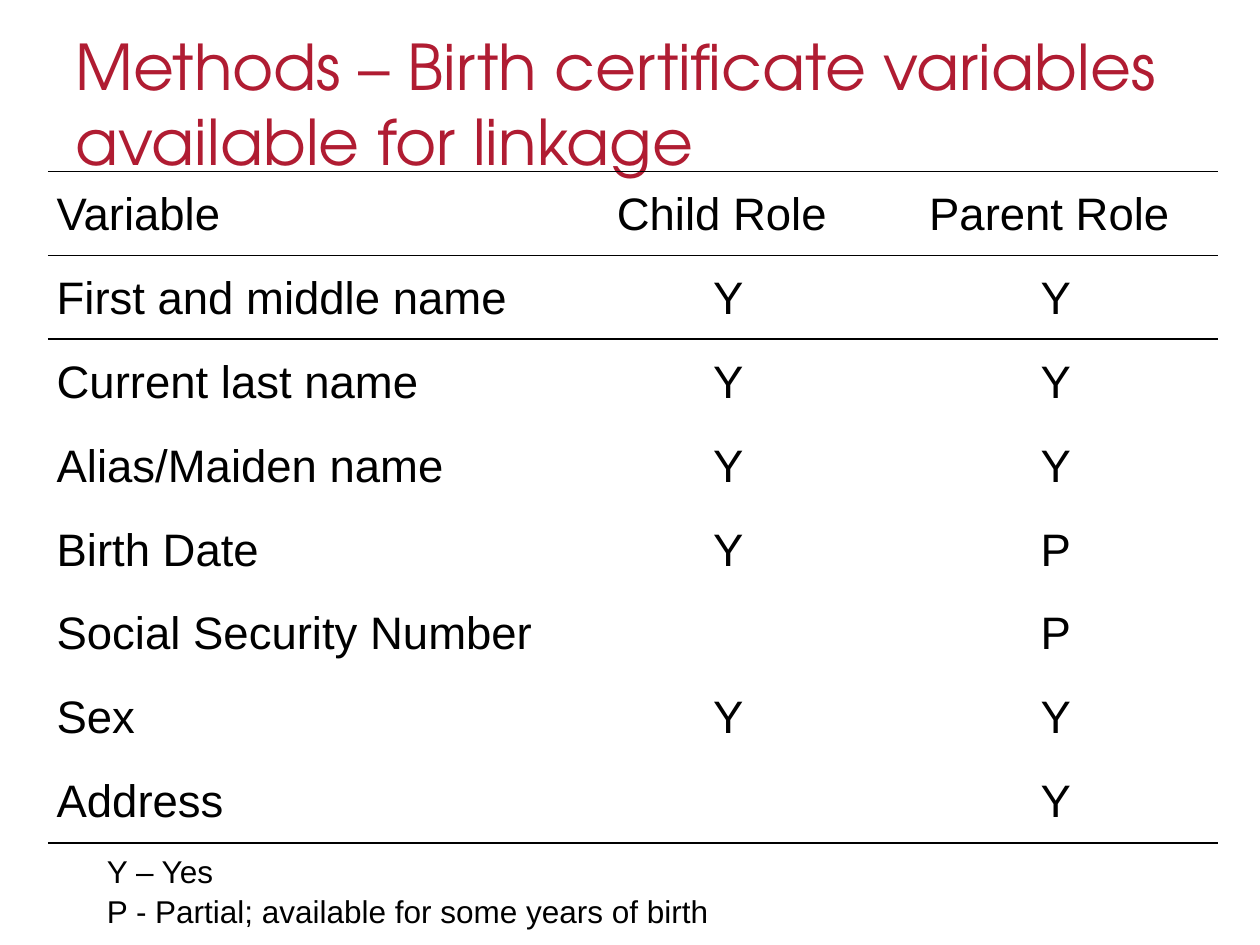
from lxml import etree
from pptx import Presentation
from pptx.dml.color import RGBColor
from pptx.enum.text import MSO_ANCHOR, PP_ALIGN
from pptx.oxml import parse_xml
from pptx.util import Inches, Pt

LEFT, CENTER = PP_ALIGN.LEFT, PP_ALIGN.CENTER
MIDDLE = MSO_ANCHOR.MIDDLE
COLORS = {"title": "B01C32", "text": "000000", "rule": "000000"}
DRAWING_NS = "http://schemas.openxmlformats.org/drawingml/2006/main"
NO_STYLE_NO_GRID = "{2D5ABB26-0587-4C30-8999-92F81FD0307C}"


def write(paragraph, text, size=26, font="Arial", color="text", align=LEFT,
          spacing=1.05, margin=0, indent=0):
    paragraph.alignment = align
    paragraph.line_spacing = spacing
    properties = paragraph._p.get_or_add_pPr()
    properties.set("marL", str(Inches(margin)))
    properties.set("indent", str(Inches(indent)))
    run = paragraph.add_run()
    run.text = text
    run.font.size = Pt(size)
    run.font.name = font
    run.font.color.rgb = RGBColor.from_string(COLORS[color])


def set_rules(cell, sides):
    """Draw 1 pt lines on the given sides, in the order T, B."""
    for position, side in enumerate(sides):
        line = parse_xml(
            f'<a:ln{side} xmlns:a="{DRAWING_NS}" w="{Pt(1)}"><a:solidFill>'
            f'<a:srgbClr val="{COLORS["rule"]}"/></a:solidFill></a:ln{side}>')
        cell._tc.get_or_add_tcPr().insert(position, line)


prs = Presentation()
prs.slide_width, prs.slide_height = Inches(10), Inches(7.5)
slide = prs.slides.add_slide(prs.slide_layouts[5])

title = slide.shapes.title
title.left, title.top = Inches(0.5), Inches(0.09)
title.width, title.height = Inches(9), Inches(1.45)
title.text_frame.vertical_anchor = MIDDLE
write(title.text_frame.paragraphs[0],
      "Methods – Birth certificate variables available for linkage",
      size=36, font="TeX Gyre Adventor", color="title", spacing=1.0)

variables = [
    ("Variable", "Child Role", "Parent Role"),
    ("First and middle name", "Y", "Y"),
    ("Current last name", "Y", "Y"),
    ("Alias/Maiden name", "Y", "Y"),
    ("Birth Date", "Y", "P"),
    ("Social Security Number", "", "P"),
    ("Sex", "Y", "Y"),
    ("Address", "", "Y"),
]
column_widths = [4.09, 2.52, 2.68]
last_row = len(variables) - 1
rules = {0: "TB", 1: "T", last_row: "B"}

table = slide.shapes.add_table(
    len(variables), len(column_widths), Inches(0.38), Inches(1.36),
    Inches(sum(column_widths)), Inches(5.33)).table
table.first_row = table.horz_banding = False
style_id = table._tbl.tblPr.find(etree.QName(DRAWING_NS, "tableStyleId").text)
style_id.text = NO_STYLE_NO_GRID
for column, width in zip(table.columns, column_widths):
    column.width = Inches(width)

for r, entries in enumerate(variables):
    for c, entry in enumerate(entries):
        cell = table.cell(r, c)
        cell.margin_left = cell.margin_right = Inches(0.07)
        cell.margin_top = cell.margin_bottom = 0
        cell.vertical_anchor = MIDDLE
        cell.fill.background()
        set_rules(cell, rules.get(r, ""))
        if entry:
            write(cell.text_frame.paragraphs[0], entry,
                  align=CENTER if c else LEFT, margin=0.1 if r and c else 0)

legend = slide.shapes.add_textbox(
    Inches(0.38), Inches(6.7), Inches(5.44), Inches(0.74)).text_frame
legend.word_wrap = True
write(legend.paragraphs[0], "Y – Yes", size=18, margin=0.12, indent=0.25)
write(legend.add_paragraph(), "P - Partial; available for some years of birth",
      size=18, margin=0.12, indent=0.25)

prs.save("out.pptx")
